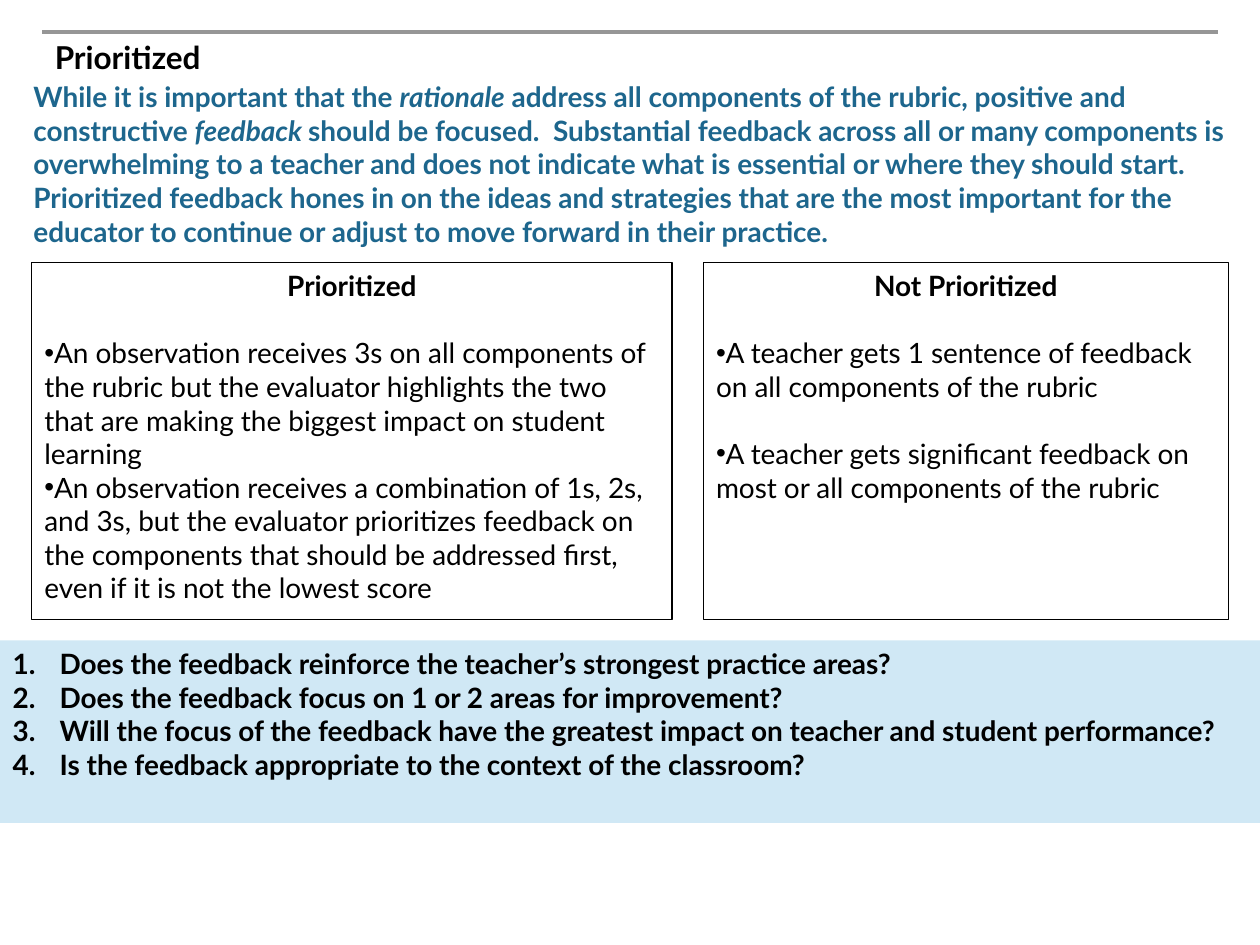
from dataclasses import dataclass

from lxml import etree
from pptx import Presentation
from pptx import util as u
from pptx.dml import color
from pptx.enum import shapes, text
from pptx.oxml import ns


@dataclass(frozen=True)
class Theme:
    font: str = "Lato"
    ink: str = "000000"
    accent: str = "1D668D"
    rule: str = "969696"
    panel: str = "FFFFFF"
    band: str = "D0E8F5"
    title_size: float = 18
    body_size: float = 16
    line_gap: float = 19.2


THEME = Theme()
ALIGN = text.PP_ALIGN
BULLET = ("buChar", {"char": "•"})
NUMBER = ("buAutoNum", {"type": "arabicPeriod"})
NO_BULLET = ("buNone", {})

INTRO = [
    ("While it is important that the ", False),
    ("rationale", True),
    (" address all components of the rubric, positive and constructive ", False),
    ("feedback ", True),
    ("should be focused.  Substantial feedback across all or many components is "
     "overwhelming to a teacher and does not indicate what is essential or where "
     "they should start.  Prioritized feedback hones in on the ideas and strategies "
     "that are the most important for the educator to continue or adjust to move "
     "forward in their practice.", False),
]
PRIORITIZED = [
    "An observation receives 3s on all components of the rubric but the evaluator "
    "highlights the two that are making the biggest impact on student learning",
    "An observation receives a combination of 1s, 2s, and 3s, but the evaluator "
    "prioritizes feedback on the components that should be addressed first, even if "
    "it is not the lowest score",
]
NOT_PRIORITIZED = [
    "A teacher gets 1 sentence of feedback on all components of the rubric",
    "A teacher gets significant feedback on most or all components of the rubric",
]
QUESTIONS = [
    "Does the feedback reinforce the teacher’s strongest practice areas?",
    "Does the feedback focus on 1 or 2 areas for improvement?",
    "Will the focus of the feedback have the greatest impact on teacher and student performance?",
    "Is the feedback appropriate to the context of the classroom?",
]


def apply(target, values):
    for name, value in values.items():
        setattr(target, name, value)


def rgb(value):
    return color.RGBColor.from_string(value)


def place(shape, box):
    """Move a placeholder to a box in centimetres and set its text frame."""
    apply(shape, dict(zip(("left", "top", "width", "height"), map(u.Cm, box))))
    apply(shape.text_frame, {
        "word_wrap": True,
        "auto_size": text.MSO_AUTO_SIZE.NONE,
        "vertical_anchor": text.MSO_ANCHOR.TOP,
    })


def paint(shape, fill):
    shape.fill.solid()
    shape.fill.fore_color.rgb = rgb(fill)


def write(frame, runs, first=False, align=ALIGN.LEFT, before=0, bullet=NO_BULLET,
          hang=0, size=THEME.body_size, ink=THEME.ink, bold=True):
    """Add a paragraph of (words, italic) runs."""
    paragraph = frame.paragraphs[0] if first else frame.add_paragraph()
    apply(paragraph, {"alignment": align, "line_spacing": 1.0,
                      "space_before": u.Pt(before), "space_after": u.Pt(0)})
    properties = paragraph._p.get_or_add_pPr()
    properties.set("marL", str(u.Cm(hang)))
    properties.set("indent", str(-u.Cm(hang)))
    tag, attributes = bullet
    etree.SubElement(properties, ns.qn(f"a:{tag}"), attributes)
    for words, italic in runs:
        run = paragraph.add_run()
        run.text = words
        apply(run.font, {"name": THEME.font, "size": u.Pt(size),
                         "bold": bold, "italic": italic})
        run.font.color.rgb = rgb(ink)


def add_header(slide, box):
    left, top, width, height = box
    rule = slide.shapes.add_connector(
        shapes.MSO_CONNECTOR.STRAIGHT,
        u.Cm(left), u.Cm(top), u.Cm(left + width), u.Cm(top))
    rule.line.width = u.Pt(2)
    rule.line.color.rgb = rgb(THEME.rule)
    etree.SubElement(rule._element.spPr, ns.qn("a:effectLst"))
    title = slide.shapes.title
    place(title, box)
    write(title.text_frame, [("Prioritized", False)], first=True, size=THEME.title_size)


def fill_intro(shape, box):
    place(shape, box)
    write(shape.text_frame, INTRO, first=True, ink=THEME.accent)


def fill_panel(shape, box, heading, points, point_gap=0):
    place(shape, box)
    paint(shape, THEME.panel)
    shape.line.width = u.Pt(0.75)
    shape.line.color.rgb = rgb(THEME.ink)
    write(shape.text_frame, [(heading, False)], first=True, align=ALIGN.CENTER)
    for index, point in enumerate(points):
        write(shape.text_frame, [(point, False)], bullet=BULLET, bold=False,
              before=point_gap if index else THEME.line_gap)


def fill_questions(shape, box):
    place(shape, box)
    paint(shape, THEME.band)
    for index, question in enumerate(QUESTIONS):
        write(shape.text_frame, [(question, False)], first=index == 0,
              bullet=NUMBER, hang=0.95)


def main():
    presentation = Presentation()
    apply(presentation, {"slide_width": u.Cm(25.4), "slide_height": u.Cm(19.05)})
    layout = presentation.slide_layouts.get_by_name("Comparison")
    slide = presentation.slides.add_slide(layout)
    intro, left_panel, questions, right_panel = (slide.placeholders[i] for i in range(1, 5))

    add_header(slide, (0.85, 0.64, 23.7, 2.34))
    fill_intro(intro, (0.42, 1.48, 24.56, 4.37))
    panel_top, panel_height = 5.29, 7.2
    fill_panel(left_panel, (0.64, panel_top, 12.91, panel_height),
               "Prioritized", PRIORITIZED)
    fill_panel(right_panel, (14.18, panel_top, 10.58, panel_height),
               "Not Prioritized", NOT_PRIORITIZED, point_gap=THEME.line_gap)
    fill_questions(questions, (0, 12.91, 25.4, 3.68))
    presentation.save("out.pptx")


if __name__ == "__main__":
    main()
